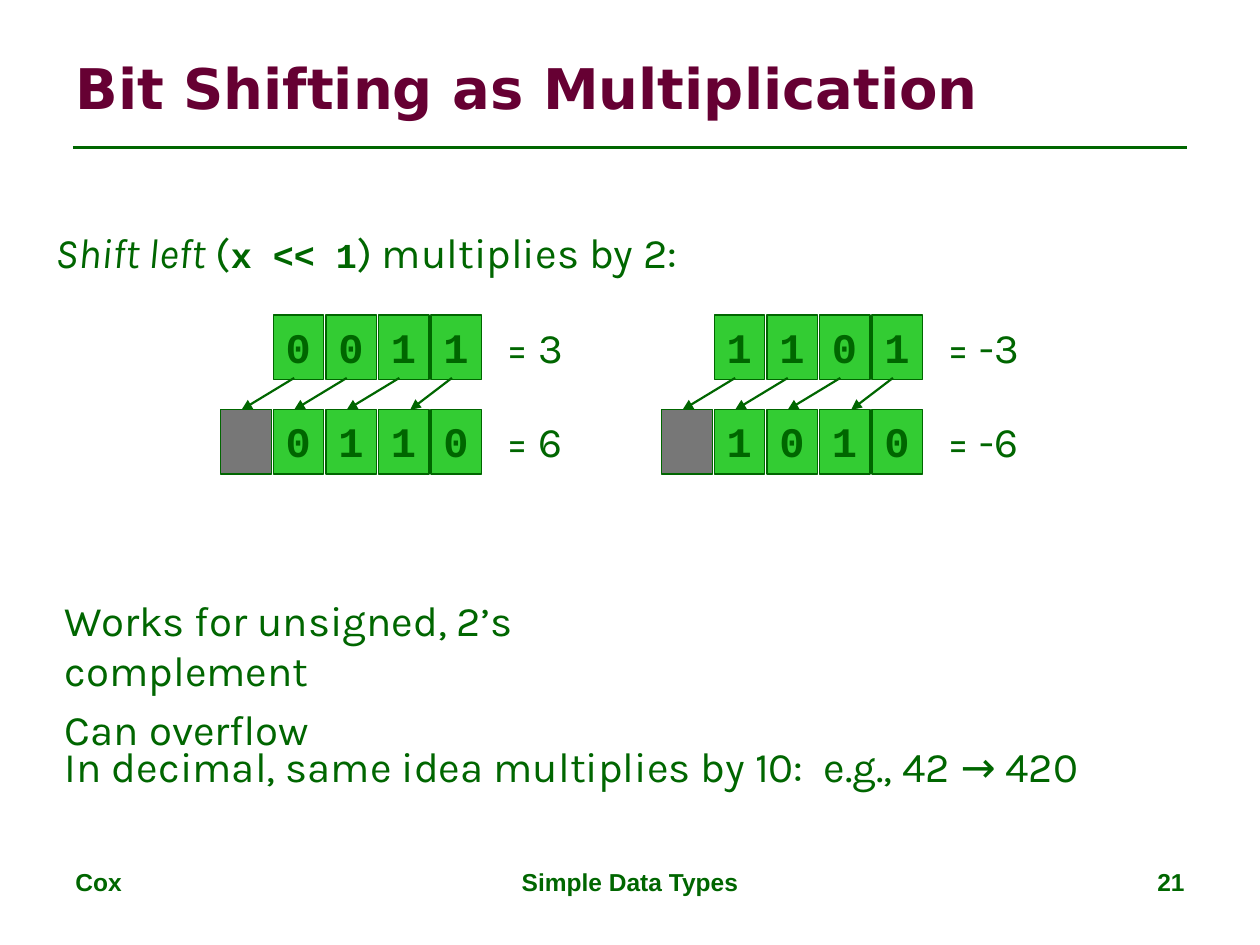
from lxml.etree import SubElement
from pptx import Presentation
from pptx.dml.color import RGBColor as RGB
from pptx.enum.shapes import MSO_CONNECTOR as LINK, MSO_SHAPE as SHAPE
from pptx.enum.text import MSO_ANCHOR as ANCHOR, PP_ALIGN as ALIGN
from pptx.oxml.ns import qn
from pptx.util import Cm, Pt

COLORS = {"ink": "006600", "title": "660033", "bit": "33CC33", "lost": "777777"}
BODY, CODE, HEAD, FOOT = "Karla", "Courier New", "DejaVu Sans", "Arial"
PITCH, CELL_W, CELL_H = 1.06, 1.02, 1.3
DROP = 1.91  # from the top of one row to the top of the next


def hue(name):
    return RGB.from_string(COLORS[name])


def add_run(para, words, size=24, font=BODY, color="ink", bold=False, italic=False):
    run = para.add_run()
    run.text = words
    face = run.font
    face.size, face.name = Pt(size), font
    face.bold, face.italic = bold, italic
    face.color.rgb = hue(color)


def add_text(slide, box, align=ALIGN.LEFT, wrap=True):
    """Add an empty text box and return its frame, with the first paragraph aligned."""
    frame = slide.shapes.add_textbox(*map(Cm, box)).text_frame
    frame.word_wrap = wrap
    frame.paragraphs[0].alignment = align
    return frame


def add_line(slide, start, end, width, arrow=False):
    line = slide.shapes.add_connector(LINK.STRAIGHT, *map(Cm, start + end))
    line.line.color.rgb = hue("ink")
    line.line.width = Pt(width)
    if arrow:
        SubElement(line.line._get_or_add_ln(), qn("a:tailEnd"), type="triangle")
    SubElement(line._element.spPr, qn("a:effectLst"))


def add_cell(slide, left, top, bit=None):
    """Draw one bit, or the grey cell of the bit shifted out."""
    cell = slide.shapes.add_shape(SHAPE.RECTANGLE, Cm(left), Cm(top), Cm(CELL_W), Cm(CELL_H))
    cell.shadow.inherit = False
    cell.fill.solid()
    cell.fill.fore_color.rgb = hue("bit" if bit else "lost")
    cell.line.color.rgb = hue("ink")
    cell.line.width = Pt(0.75)
    if bit:
        frame = cell.text_frame
        frame.vertical_anchor = ANCHOR.TOP
        para = frame.paragraphs[0]
        para.alignment = ALIGN.LEFT
        para.space_before = Pt(12)
        add_run(para, bit, font=CODE, bold=True)


def add_row(slide, left, top, bits, value):
    for i, bit in enumerate(bits):
        add_cell(slide, left + i * PITCH, top, bit)
    frame = add_text(slide, (left + 4.45, top, 2.1, 1.27), wrap=False)
    add_run(frame.paragraphs[0], f"= {value}")


def add_shift(slide, left, top, before, after):
    """Show a number above its left shift; left is the edge of the lost bit."""
    low = top + DROP
    for y, (bits, value) in ((top, before), (low, after)):
        add_row(slide, left + PITCH, y, bits, value)
    add_cell(slide, left, low)
    last = len(before[0]) - 1
    for i in range(last + 1):
        tip = left + i * PITCH + (0.64 if i == last else 0.42)
        add_line(slide, (left + (i + 1) * PITCH + 0.42, top + 1.27), (tip, low), 1.25, True)


def add_header(slide, left, top, width):
    frame = add_text(slide, (left, top, width, 1.98))
    frame.vertical_anchor = ANCHOR.MIDDLE
    add_run(frame.paragraphs[0], "Bit Shifting as Multiplication", 32, HEAD, "title", True)
    add_line(slide, (left + 0.2, top + 2.2), (left + width - 0.2, top + 2.2), 1.5)


def add_lead(slide, left, top, width):
    para = add_text(slide, (left, top, width, 1.27), ALIGN.CENTER, False).paragraphs[0]
    add_run(para, "Shift left", italic=True)
    add_run(para, " (")
    add_run(para, "x << 1", 20, CODE, bold=True)
    add_run(para, ") multiplies by 2:")


def add_notes(slide, left, top):
    frame = add_text(slide, (left, top, 14.15, 2.5))
    add_run(frame.paragraphs[0], "Works for unsigned, 2’s complement")
    para = frame.add_paragraph()
    add_run(para, "Can overflow")
    for para in frame.paragraphs:
        para.space_before = Pt(4.8)
    frame = add_text(slide, (left, top + 2.96, 21.34, 1.27), wrap=False)
    add_run(frame.paragraphs[0], "In decimal, same idea multiplies by 10:  e.g., 42 → 420")


def add_footer(slide, left, top, width):
    side, mid = 5.92, 8.05
    parts = (
        ("Cox", left, side, ALIGN.LEFT),
        ("Simple Data Types", left + (width - mid) / 2, mid, ALIGN.CENTER),
        ("21", left + width - side, side, ALIGN.RIGHT),
    )
    for words, x, wide, align in parts:
        frame = add_text(slide, (x, top, wide, 1.32), align)
        add_run(frame.paragraphs[0], words, 14, FOOT, bold=True)


def main():
    deck = Presentation()
    deck.slide_width, deck.slide_height = Cm(25.4), Cm(19.05)
    slide = deck.slides.add_slide(deck.slide_layouts[6])
    add_header(slide, 1.27, 0.77, 22.86)
    add_lead(slide, 0.85, 4.45, 13.08)
    add_shift(slide, 4.45, 6.35, ("0011", 3), ("0110", 6))
    add_shift(slide, 13.34, 6.35, ("1101", -3), ("1010", -6))
    add_notes(slide, 1.06, 11.85)
    add_footer(slide, 1.27, 17.35, 22.86)
    deck.save("out.pptx")


if __name__ == "__main__":
    main()
